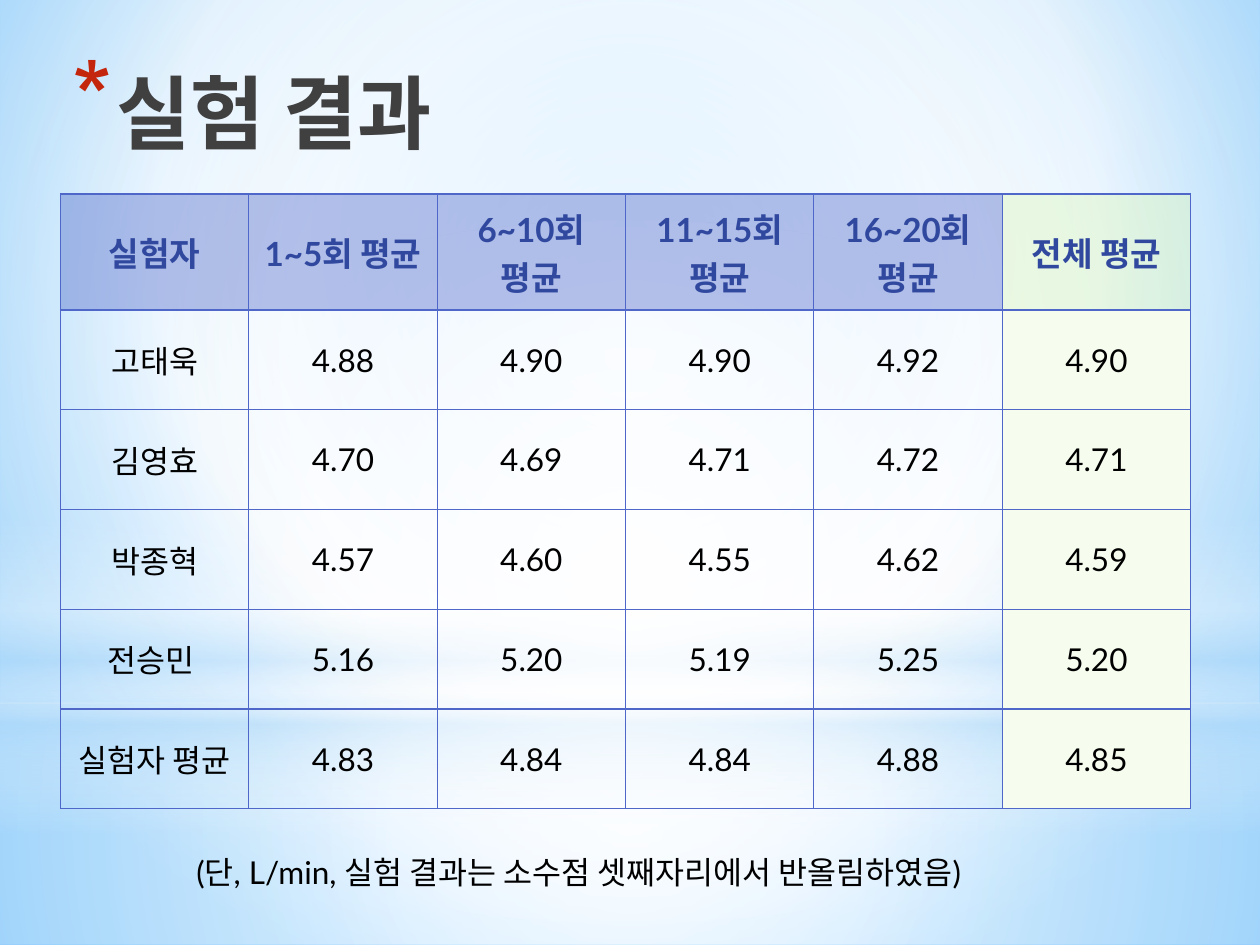
from lxml import etree
from pptx import Presentation
from pptx.dml.color import RGBColor
from pptx.enum.shapes import MSO_SHAPE
from pptx.enum.text import MSO_ANCHOR, PP_ALIGN
from pptx.oxml.ns import qn
from pptx.util import Inches, Pt

RECT, OVAL = MSO_SHAPE.RECTANGLE, MSO_SHAPE.OVAL
MIDDLE, CENTER = MSO_ANCHOR.MIDDLE, PP_ALIGN.CENTER

COLORS = {
    "white": "FFFFFF", "sky": "B4DCFA", "pale": "9ED5FF", "deep": "5BB9FF",
    "black": "000000", "title": "404040", "star": "C3260C",
    "blue": "4E67C8", "navy": "31489F", "lime": "DCF7BA", "mint": "F6FDEE",
}

ROWS = [
    ["실험자", "1~5회 평균", "6~10회 평균", "11~15회 평균", "16~20회 평균", "전체 평균"],
    ["고태욱", "4.88", "4.90", "4.90", "4.92", "4.90"],
    ["김영효", "4.70", "4.69", "4.71", "4.72", "4.71"],
    ["박종혁", "4.57", "4.60", "4.55", "4.62", "4.59"],
    ["전승민 ", "5.16", "5.20", "5.19", "5.25", "5.20"],
    ["실험자 평균", "4.83", "4.84", "4.84", "4.88", "4.85"],
]


def add(parent, tag, **attrs):
    node = etree.SubElement(parent, qn(tag))
    for key, value in attrs.items():
        node.set(key, str(value))
    return node


def add_color(parent, name, alpha=100):
    node = add(parent, "a:srgbClr", val=COLORS[name])
    if alpha < 100:
        add(node, "a:alpha", val=alpha * 1000)


def set_grad(root, stops, focus=None):
    """Turn the solid fill under root into a gradient: round with a focus, else downward."""
    solid = root.find(".//" + qn("a:solidFill"))
    grad = etree.Element(qn("a:gradFill"), rotWithShape="1")
    items = add(grad, "a:gsLst")
    for pos, name, alpha in stops:
        add_color(add(items, "a:gs", pos=pos * 1000), name, alpha)
    if focus:
        sides = {side: value * 1000 for side, value in zip("ltrb", focus)}
        add(add(grad, "a:path", path="circle"), "a:fillToRect", **sides)
    else:
        add(grad, "a:lin", ang=5400000, scaled=0)
    solid.getparent().replace(solid, grad)


class Deck:
    font = "Lato"

    def __init__(self):
        self.prs = Presentation()
        self.prs.slide_width, self.prs.slide_height = Inches(10), Inches(7.5)
        self.slide = self.prs.slides.add_slide(self.prs.slide_layouts[6])

    def backdrop(self, stops, focus):
        self.slide.background.fill.solid()
        set_grad(self.slide.element, stops, focus)

    def glow(self, kind, top, height, stops, focus=None):
        shape = self.slide.shapes.add_shape(kind, 0, Inches(top), Inches(10), Inches(height))
        shape.shadow.inherit = False
        shape.line.fill.background()
        shape.fill.solid()
        set_grad(shape.element.spPr, stops, focus)

    def style(self, para, size, color, bold=False):
        for run in para.runs:
            run.font.name, run.font.size, run.font.bold = self.font, Pt(size), bold
            run.font.color.rgb = RGBColor.from_string(COLORS[color])

    def text(self, box, words, size, color, bold=False):
        frame = self.slide.shapes.add_textbox(*map(Inches, box)).text_frame
        frame.word_wrap = True
        frame.text = words
        self.style(frame.paragraphs[0], size, color, bold)
        return frame.paragraphs[0]

    def title(self, box, words):
        props = self.text(box, words, 46, "title", True)._p.get_or_add_pPr()
        props.set("marL", str(Inches(0.35)))
        props.set("indent", str(Inches(-0.35)))
        add_color(add(props, "a:buClr"), "star")
        add(props, "a:buSzPct", val=128000)
        add(props, "a:buChar", char="*")

    def cell(self, cell, words, head, last):
        cell.text = words
        cell.vertical_anchor = MIDDLE
        para = cell.text_frame.paragraphs[0]
        para.alignment = CENTER
        self.style(para, 19 if head else 18, "navy" if head else "black", head)
        # Fill
        cell.fill.background()
        props = cell._tc.get_or_add_tcPr()
        if head or last:
            props.remove(props.find(qn("a:noFill")))
            name = ("lime" if last else "blue") if head else "mint"
            add_color(add(props, "a:solidFill"), name, 40 if head else 100)
        # Borders come before the fill
        for i, side in enumerate("LRTB"):
            line = etree.Element(qn("a:ln" + side), w=str(Pt(0.75)))
            add_color(add(line, "a:solidFill"), "blue")
            props.insert(i, line)

    def table(self, box, rows, head):
        count, width = len(rows[0]), box[2]
        table = self.slide.shapes.add_table(len(rows), count, *map(Inches, box)).table
        table.first_row = table.horz_banding = False
        for col in table.columns:
            col.width = Inches(width / count)
        for r, words in enumerate(rows):
            table.rows[r].height = Inches(head if r == 0 else (box[3] - head) / (len(rows) - 1))
            for c, word in enumerate(words):
                self.cell(table.cell(r, c), word, r == 0, c == count - 1)


def main():
    deck = Deck()
    mid = (50, 50, 50, 50)

    # Sky background
    deck.backdrop([(0, "pale", 100), (60, "white", 100), (100, "deep", 100)], (20, 10, 20, 60))
    deck.glow(RECT, 5.58, 1.92, [(0, "white", 91), (37, "white", 76), (100, "sky", 79)], mid)
    deck.glow(RECT, 0, 5.58, [(0, "white", 89), (48, "white", 62), (100, "sky", 79)], mid)
    deck.glow(RECT, 4.12, 2.5, [(0, "white", 0), (29, "white", 30), (45, "sky", 40),
                                (55, "white", 26), (65, "sky", 60), (100, "white", 0)])
    deck.glow(OVAL, 1.75, 5.58, [(0, "white", 100), (56, "white", 0)], mid)

    # Title, results and note
    deck.title((0.48, 0.45, 7.12, 1.25), "실험 결과")
    deck.table((0.48, 1.54, 8.97, 4.88), ROWS, 0.92)
    deck.text((1.46, 6.72, 7.09, 0.4),
              "(단, L/min, 실험 결과는 소수점 셋째자리에서 반올림하였음)", 18, "black")
    deck.prs.save("out.pptx")


if __name__ == "__main__":
    main()
